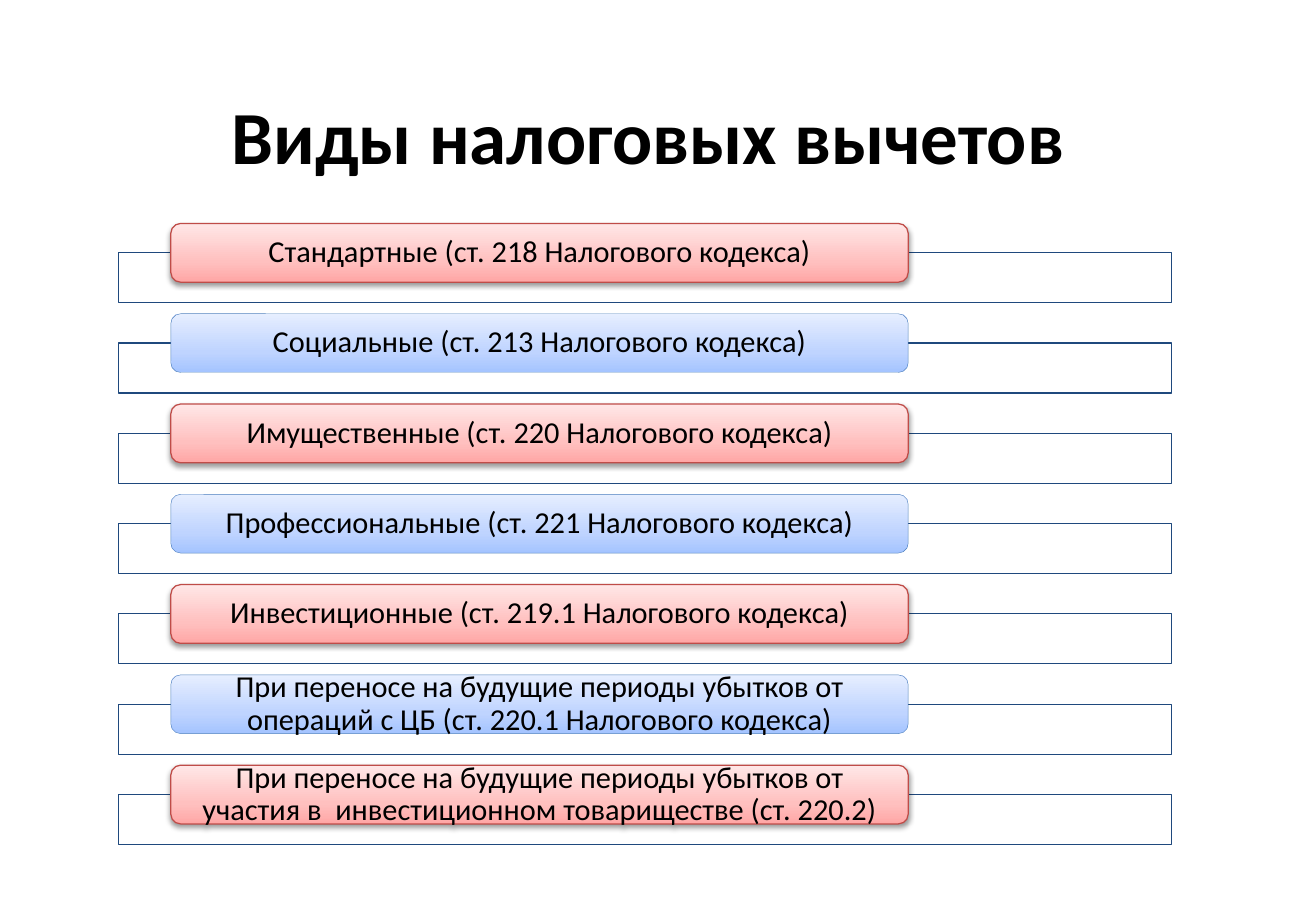
from copy import deepcopy
from dataclasses import dataclass

from lxml import etree
from pptx import Presentation
from pptx import util as u
from pptx.dml.color import RGBColor
from pptx.enum import shapes, text
from pptx.oxml import ns

PX = 3048


@dataclass(frozen=True)
class Theme:
    font: str = "Calibri"
    ink: str = "000000"
    paper: str = "FFFFFF"
    edge: str = "1F497D"
    title: float = 44.4
    body: float = 18
    red: tuple = ("FFA6A5", "FFC0BF", "FFE7E7")
    rim: str = "BF4C48"
    blue: tuple = ("A4C4FF", "BFD4FF", "E6EEFF")
    frame: str = "4F81BD"


LOOK = Theme()
STOPS = (0, 0.35, 1)
KINDS = (
    "Стандартные (ст. 218 Налогового кодекса)",
    "Социальные (ст. 213 Налогового кодекса)",
    "Имущественные (ст. 220 Налогового кодекса)",
    "Профессиональные (ст. 221 Налогового кодекса)",
    "Инвестиционные (ст. 219.1 Налогового кодекса)",
    "При переносе на будущие периоды убытков от операций с ЦБ (ст. 220.1 Налогового кодекса)",
    "При переносе на будущие периоды убытков от участия в  инвестиционном товариществе (ст. 220.2)",
)


def rgb(code):
    return RGBColor.from_string(code)


def place(*box):
    return [u.Emu(n * PX) for n in box]


def node(host, tag, **attrs):
    return etree.SubElement(host, ns.qn(tag), attrs)


def write(shape, words, size, bold, side, edge):
    frame = shape.text_frame
    frame.text = words
    frame.word_wrap = True
    frame.vertical_anchor = text.MSO_ANCHOR.MIDDLE
    frame.margin_left = frame.margin_right = u.Emu(side * PX)
    frame.margin_top = frame.margin_bottom = u.Emu(edge * PX)
    line = frame.paragraphs[0]
    line.alignment = text.PP_ALIGN.CENTER
    line.line_spacing = 0.9
    font = line.runs[0].font
    font.name = LOOK.font
    font.size = u.Pt(size)
    font.bold = bold
    font.color.rgb = rgb(LOOK.ink)


def draw(slide, kind, box, edge, width):
    shape = slide.shapes.add_shape(kind, *place(*box))
    shape.shadow.inherit = False
    shape.line.color.rgb = rgb(edge)
    shape.line.width = u.Pt(width)
    return shape


def blend(shape, codes):
    fill = shape.fill
    fill.gradient()
    fill.gradient_angle = 90
    stops = next(shape._element.spPr.iter(ns.qn("a:gsLst")))
    stops.insert(1, deepcopy(stops[0]))
    for stop, spot, code in zip(fill.gradient_stops, STOPS, codes):
        stop.position = spot
        stop.color.rgb = rgb(code)


def shade(shape):
    effects = shape._element.spPr.find(ns.qn("a:effectLst"))
    cast = node(effects, "a:outerShdw", blurRad=str(u.Pt(3.1)),
                dist=str(u.Pt(1.6)), dir="5400000", rotWithShape="0")
    color = node(cast, "a:srgbClr", val=LOOK.ink)
    node(color, "a:alpha", val="38000")


def bar(slide, box, width):
    shape = draw(slide, shapes.MSO_SHAPE.RECTANGLE, box, LOOK.edge, width)
    shape.fill.solid()
    shape.fill.fore_color.rgb = rgb(LOOK.paper)
    color = next(shape._element.spPr.iter(ns.qn("a:srgbClr")))
    node(color, "a:alpha", val="90000")


def pill(slide, box, words, warm):
    edge, width = (LOOK.rim, 0.75) if warm else (LOOK.frame, 0.25)
    shape = draw(slide, shapes.MSO_SHAPE.ROUNDED_RECTANGLE, box, edge, width)
    blend(shape, LOOK.red if warm else LOOK.blue)
    if warm:
        shade(shape)
    write(shape, words, LOOK.body, False, 66, 0)


def head(slide, box, words):
    label = slide.shapes.add_textbox(*place(*box))
    write(label, words, LOOK.title, True, 33, 18)


def rows(slide, box, items):
    left, top, wide, pitch = box
    for i, words in enumerate(items):
        y = top + i * pitch
        bar(slide, (left, y + 72, wide, 124), 0.75 if i == 1 else 0.5)
        pill(slide, (left + 130, y, wide * 7 // 10, 145), words, i % 2 == 0)


def main():
    deck = Presentation()
    deck.slide_width, deck.slide_height = place(3250, 2250)
    slide = deck.slides.add_slide(deck.slide_layouts[6])
    rows(slide, (292, 552, 2602, 223), KINDS)
    head(slide, (373, 228, 2457, 237), "Виды налоговых вычетов")
    deck.save("out.pptx")


if __name__ == "__main__":
    main()
